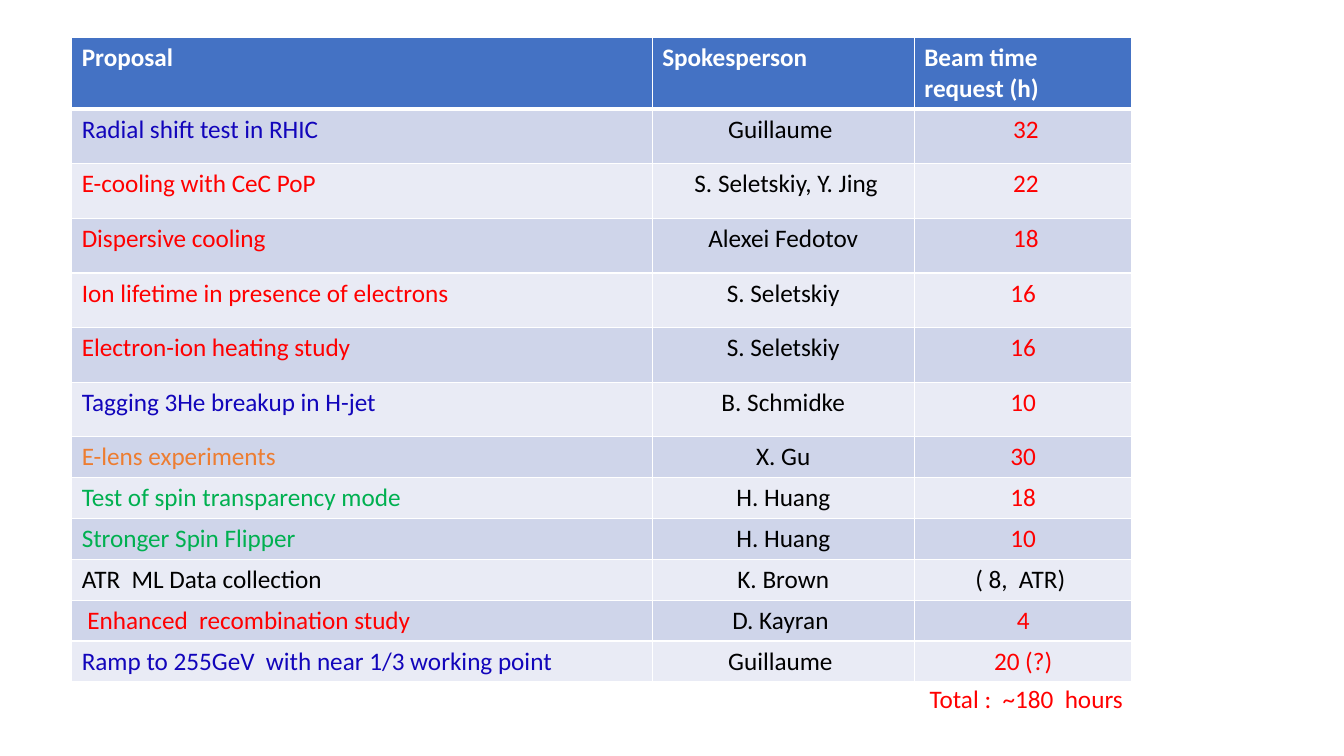
from lxml import etree
from pptx import Presentation
from pptx.dml.color import RGBColor
from pptx.enum.text import PP_ALIGN
from pptx.oxml.ns import qn
from pptx.util import Pt

LEFT, CENTER = PP_ALIGN.LEFT, PP_ALIGN.CENTER

COLORS = {
    "white": "FFFFFF",
    "black": "000000",
    "header": "4472C4",
    "band_dark": "CFD5EA",
    "band_light": "E9EBF5",
    "blue": "1205BB",
    "red": "FF0000",
    "orange": "ED7D31",
    "green": "00B050",
}

HEADINGS = ["Proposal", "Spokesperson", "Beam time request (h)"]
# Proposal, its color, spokesperson, hours, color of the hours
PROPOSALS = [
    ("Radial shift test in RHIC", "blue", "Guillaume ", " 32", "red"),
    ("E-cooling with CeC PoP", "red", " S. Seletskiy, Y. Jing", " 22", "red"),
    ("Dispersive cooling", "red", "Alexei Fedotov", " 18", "red"),
    ("Ion lifetime in presence of electrons", "red", "S. Seletskiy", "16", "red"),
    ("Electron-ion heating study", "red", "S. Seletskiy", "16", "red"),
    ("Tagging 3He breakup in H-jet", "blue", "B. Schmidke", "10", "red"),
    ("E-lens experiments", "orange", "X. Gu", "30", "red"),
    ("Test of spin transparency mode", "green", "H. Huang", "18", "red"),
    ("Stronger Spin Flipper", "green", "H. Huang", "10", "red"),
    ("ATR  ML Data collection", "black", "K. Brown", "( 8,  ATR) ", "black"),
    (" Enhanced  recombination study", "red", "D. Kayran ", "4", "red"),
    ("Ramp to 255GeV  with near 1/3 working point", "blue", "Guillaume ", "20 (?)", "red"),
]
COLUMN_WIDTHS = [414.7, 187.2, 155.5]
ROW_HEIGHTS = [50.4] + [39] * 6 + [29.2] * 6


class SlideBuilder:
    font_name = "Calibri"
    font_size = 18

    def __init__(self, slide):
        self.slide = slide

    def set_text(self, text_frame, text, color, alignment=LEFT, bold=False):
        paragraph = text_frame.paragraphs[0]
        paragraph.text = text
        paragraph.alignment = alignment
        font = paragraph.font
        font.name, font.size, font.bold = self.font_name, Pt(self.font_size), bold
        font.color.rgb = RGBColor.from_string(COLORS[color])

    def borders(self, cell, top, bottom):
        properties = cell._tc.get_or_add_tcPr()
        sides = {"a:lnL": 1, "a:lnR": 1, "a:lnT": top, "a:lnB": bottom}
        for index, (tag, width) in enumerate(sides.items()):
            line = etree.Element(qn(tag), w=str(Pt(width)))
            fill = etree.SubElement(line, qn("a:solidFill"))
            etree.SubElement(fill, qn("a:srgbClr"), val=COLORS["white"])
            properties.insert(index, line)

    def cell(self, cell, text, color, fill, alignment=LEFT, bold=False, top=1, bottom=1):
        cell.fill.solid()
        cell.fill.fore_color.rgb = RGBColor.from_string(COLORS[fill])
        self.borders(cell, top, bottom)
        self.set_text(cell.text_frame, text, color, alignment, bold)

    def table(self, left, top, widths, heights):
        frame = self.slide.shapes.add_table(
            len(heights), len(widths), Pt(left), Pt(top), Pt(sum(widths)), Pt(sum(heights)))
        table = frame.table
        for column, width in zip(table.columns, widths):
            column.width = Pt(width)
        for row, height in zip(table.rows, heights):
            row.height = Pt(height)
        return table

    def text(self, left, top, width, height, text, color):
        box = self.slide.shapes.add_textbox(Pt(left), Pt(top), Pt(width), Pt(height))
        box.text_frame.word_wrap = True
        self.set_text(box.text_frame, text, color)


def main():
    presentation = Presentation()
    presentation.slide_width, presentation.slide_height = Pt(960), Pt(540)
    builder = SlideBuilder(presentation.slides.add_slide(presentation.slide_layouts[6]))

    # Header row
    table = builder.table(51.2, 26.9, COLUMN_WIDTHS, ROW_HEIGHTS)
    for column, heading in enumerate(HEADINGS):
        builder.cell(table.cell(0, column), heading, "white", "header", bold=True, bottom=3)

    # Banded proposal rows
    for row, (proposal, color, person, hours, hours_color) in enumerate(PROPOSALS, start=1):
        fill = "band_dark" if row % 2 else "band_light"
        top = 3 if row == 1 else 1
        builder.cell(table.cell(row, 0), proposal, color, fill, top=top)
        builder.cell(table.cell(row, 1), person, "black", fill, CENTER, top=top)
        builder.cell(table.cell(row, 2), hours, hours_color, fill, CENTER, top=top)

    # Total below the table
    builder.text(656.9, 484.7, 290, 29.1, "Total :  ~180  hours", "red")

    presentation.save("out.pptx")


if __name__ == "__main__":
    main()
